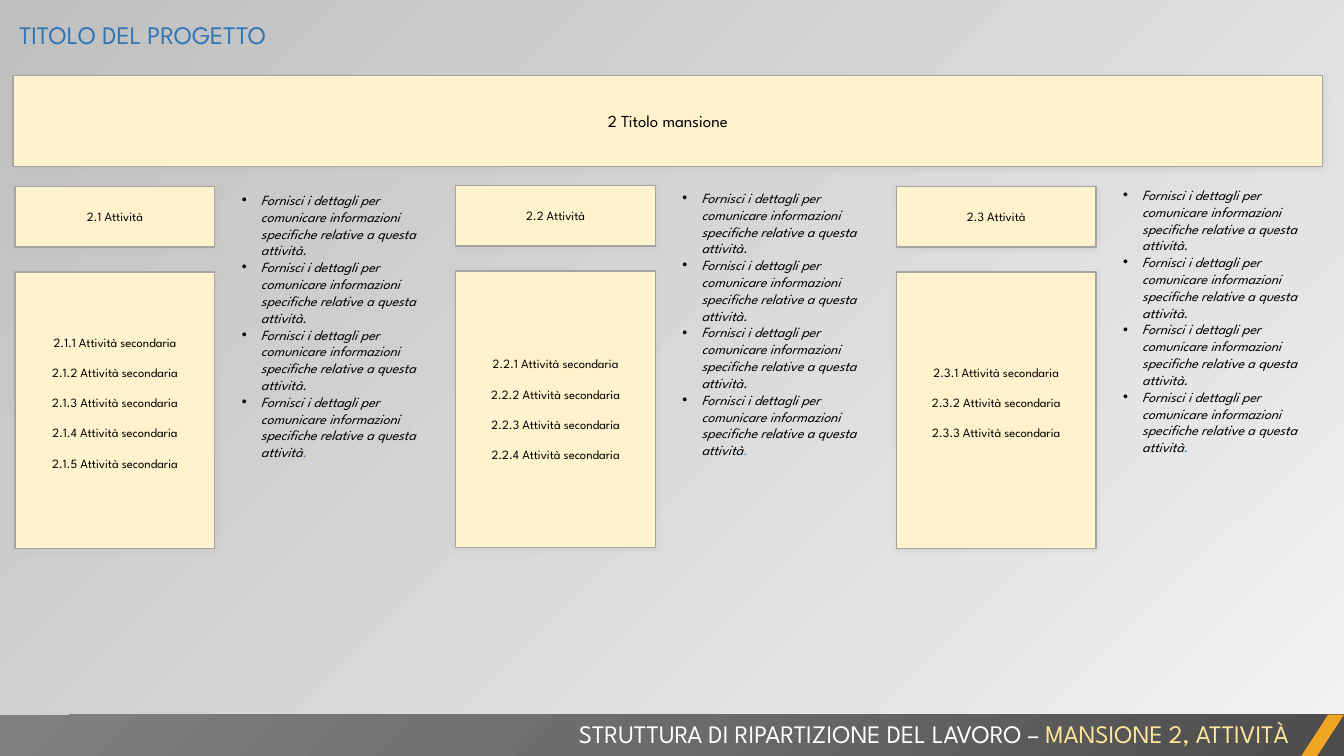
"""Build the work breakdown slide for task 2 and its activities."""
from dataclasses import dataclass

from pptx import Presentation, util as u
from pptx.dml.color import RGBColor
from pptx.enum import shapes, text
from pptx.oxml import ns, parse_xml


@dataclass(frozen=True)
class Theme:
    font: str = "League Spartan"
    cream: str = "FFF2CC"
    edge: str = "A5A5A5"
    shade: str = "BFBFBF"
    light: str = "F2F2F2"
    black: str = "000000"
    white: str = "FFFFFF"
    blue: str = "2E75B6"
    gold: str = "FFE699"
    amber: str = "F0A622"
    bar: tuple[str, ...] = ("4C4C4C", "6B6B6B", "808080")
    head: int = 18
    task: int = 12
    note: int = 10
    small: int = 9
    gap: float = 10.8


@dataclass(frozen=True)
class Run:
    words: str
    color: str
    size: int
    italic: bool = False


@dataclass(frozen=True)
class Box:
    left: float
    top: float
    width: float
    height: float

    def place(self) -> list[u.Length]:
        return [u.Inches(n) for n in (self.left, self.top, self.width, self.height)]


@dataclass(frozen=True)
class Column:
    number: int
    count: int
    shift: float
    note: float
    foot: float


THEME = Theme()
RECT = shapes.MSO_SHAPE.RECTANGLE
ALIGN = text.PP_ALIGN
DETAIL = "Fornisci i dettagli per comunicare informazioni specifiche relative a questa attività"
COLUMNS = [
    Column(1, 5, 0, 1.85, 0.2),
    Column(2, 4, -0.01, 1.83, 0.05),
    Column(3, 3, 0, 1.8, 0.2),
]


def apply(target, values: dict) -> None:
    """Set each named value on the target."""
    for name, value in values.items():
        setattr(target, name, value)


def tint(color: str, alpha: int = 100) -> str:
    """Return the XML of a colour."""
    return f'<a:srgbClr val="{color}"><a:alpha val="{alpha * 1000}"/></a:srgbClr>'


def grade(owner, stops: list[tuple[int, str]], course: str) -> None:
    """Swap the owner's solid fill for a gradient."""
    marks = "".join(f'<a:gs pos="{pos * 1000}">{color}</a:gs>' for pos, color in stops)
    fill = parse_xml(
        f'<a:gradFill {ns.nsdecls("a")} rotWithShape="1">'
        f"<a:gsLst>{marks}</a:gsLst>{course}</a:gradFill>"
    )
    old = owner.find(ns.qn("a:solidFill"))
    owner.replace(old, fill)


def write(frame, lines: list[list[Run]], align: ALIGN, gap: float = 0) -> None:
    """Fill a text frame with lines of styled runs."""
    frame.word_wrap = True
    for i, line in enumerate(lines):
        para = frame.paragraphs[0] if i == 0 else frame.add_paragraph()
        para.alignment = align
        if gap and i < len(lines) - 1:
            para.space_after = u.Pt(gap)
        for item in line:
            run = para.add_run()
            run.text = item.words
            apply(run.font, {"name": THEME.font, "size": u.Pt(item.size), "italic": item.italic})
            run.font.color.rgb = RGBColor.from_string(item.color)


def block(slide, kind: shapes.MSO_SHAPE, box: Box, color: str):
    """Add a plain filled shape."""
    shape = slide.shapes.add_shape(kind, *box.place())
    shape.shadow.inherit = False
    shape.fill.solid()
    shape.fill.fore_color.rgb = RGBColor.from_string(color)
    shape.line.fill.background()
    return shape


def card(slide, box: Box, words: list[str], size: int, foot: float = 0.05) -> None:
    """Add a cream card with centred lines and a soft shadow."""
    shape = block(slide, RECT, box, THEME.cream)
    shape.line.color.rgb = RGBColor.from_string(THEME.edge)
    shape.line.width = u.Pt(1)
    effect = shape._element.spPr.find(ns.qn("a:effectLst"))
    effect.append(parse_xml(
        f'<a:outerShdw {ns.nsdecls("a")} blurRad="{u.Pt(4)}" dist="{u.Pt(1)}" '
        f'dir="5400000" algn="t" rotWithShape="0">{tint(THEME.shade, 40)}</a:outerShdw>'
    ))
    frame = shape.text_frame
    apply(frame, {"vertical_anchor": text.MSO_ANCHOR.MIDDLE, "margin_bottom": u.Inches(foot)})
    write(frame, [[Run(word, THEME.black, size)] for word in words], ALIGN.CENTER, THEME.gap)


def label(slide, box: Box, lines: list[list[Run]], align: ALIGN = ALIGN.LEFT):
    """Add a text box and return its frame."""
    frame = slide.shapes.add_textbox(*box.place()).text_frame
    write(frame, lines, align)
    frame.auto_size = text.MSO_AUTO_SIZE.SHAPE_TO_FIT_TEXT
    return frame


def notes(slide, box: Box) -> None:
    """Add the four bulleted details of an activity."""
    full = [Run(DETAIL + ".", THEME.black, THEME.note, True)]
    last = [
        Run(DETAIL, THEME.black, THEME.note, True),
        Run(".", THEME.blue, THEME.note, True),
    ]
    frame = label(slide, box, [full] * 3 + [last])
    for para in frame.paragraphs:
        props = para._p.get_or_add_pPr()
        props.set("marL", str(u.Inches(0.19)))
        props.set("indent", str(u.Inches(-0.19)))
        for mark in ('buFont {} typeface="Arial"', 'buChar {} char="•"'):
            props.append(parse_xml(f'<a:{mark.format(ns.nsdecls("a"))}/>'))


def footer(slide) -> None:
    """Add the dark bar, its amber stripe and its heading."""
    bar = block(slide, RECT, Box(0, 7.09, 13.33, 0.42), THEME.bar[0])
    stops = [(50 * i, tint(color)) for i, color in enumerate(THEME.bar)]
    course = '<a:path path="circle"><a:fillToRect l="100000" t="100000"/></a:path>'
    grade(bar._element.spPr, stops, course)
    kind = shapes.MSO_SHAPE.PARALLELOGRAM
    stripe = block(slide, kind, Box(12.9, 7.09, 0.43, 0.42), THEME.amber)
    stripe.adjustments[0] = 0.65
    line = [
        Run("STRUTTURA DI RIPARTIZIONE DEL LAVORO – ", THEME.white, THEME.head),
        Run("MANSIONE 2, ATTIVITÀ", THEME.gold, THEME.head),
    ]
    label(slide, Box(0.67, 7.08, 12.21, 0.4), [line], ALIGN.RIGHT)


def main() -> None:
    """Build and save the slide."""
    deck = Presentation()
    apply(deck, {"slide_width": u.Inches(13.33), "slide_height": u.Inches(7.5)})
    slide = deck.slides.add_slide(deck.slide_layouts[6])
    back = slide.background.fill
    back.solid()
    back.fore_color.rgb = RGBColor.from_string(THEME.shade)
    stops = [(0, tint(THEME.light, 40)), (100, tint(THEME.shade))]
    owner = slide._element.cSld.bg.bgPr
    grade(owner, stops, f'<a:lin ang="{225 * 60000}" scaled="0"/>')

    label(slide, Box(0.09, 0.14, 10.11, 0.4), [[Run("TITOLO DEL PROGETTO", THEME.blue, THEME.head)]])
    card(slide, Box(0.13, 0.75, 12.99, 0.9), ["2 Titolo mansione"], THEME.task)
    footer(slide)
    for i, col in enumerate(COLUMNS):
        left = 0.15 + 4.37 * i
        name = f"2.{col.number}"
        items = [f"{name}.{n} Attività secondaria" for n in range(1, col.count + 1)]
        card(slide, Box(left, 1.85 + col.shift, 1.98, 0.6), [f"{name} Attività"], THEME.small)
        card(slide, Box(left, 2.7 + col.shift, 1.98, 2.74), items, THEME.small, col.foot)
        notes(slide, Box(left + 2.15, col.note, 2.06, 3))
    deck.save("out.pptx")


if __name__ == "__main__":
    main()
